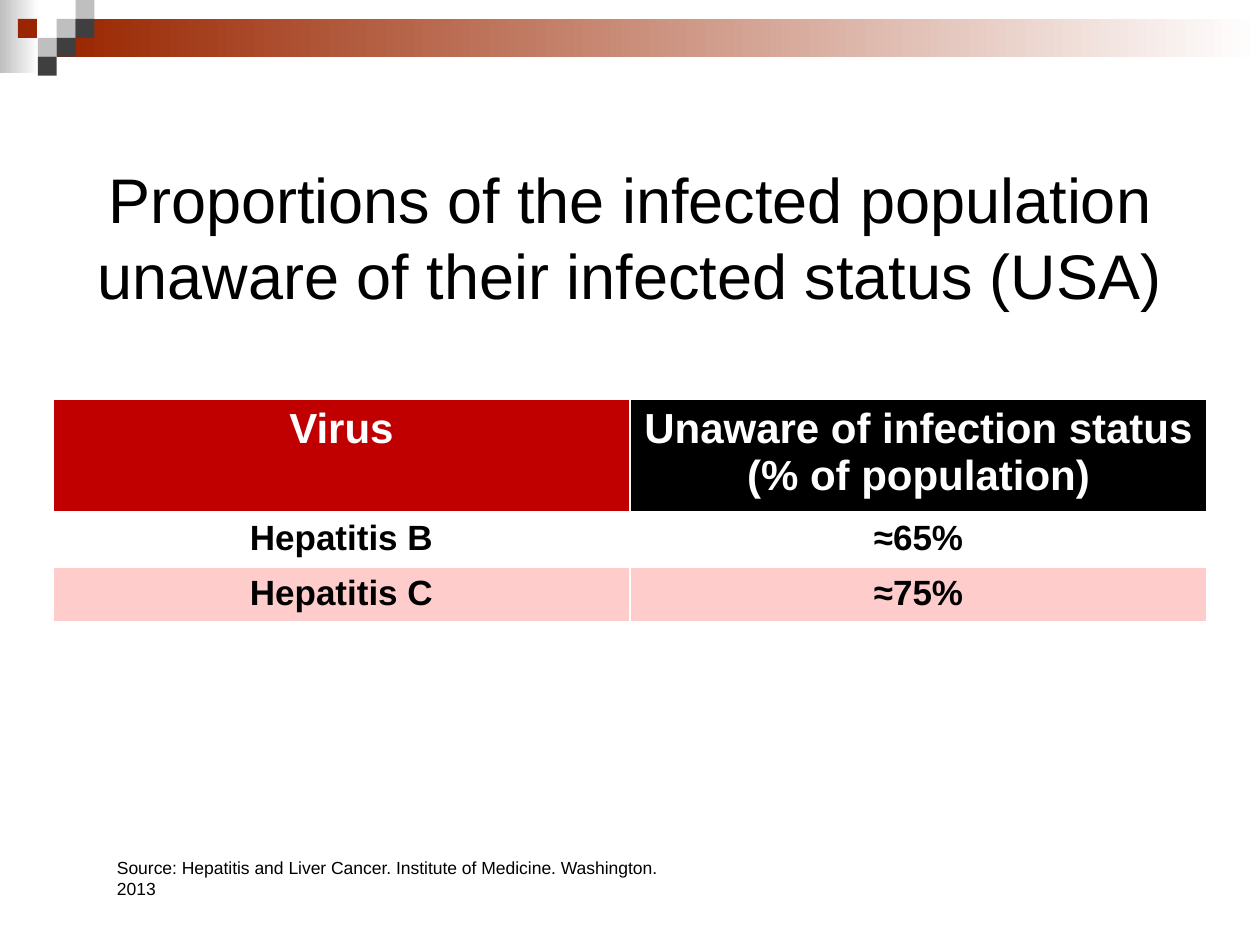
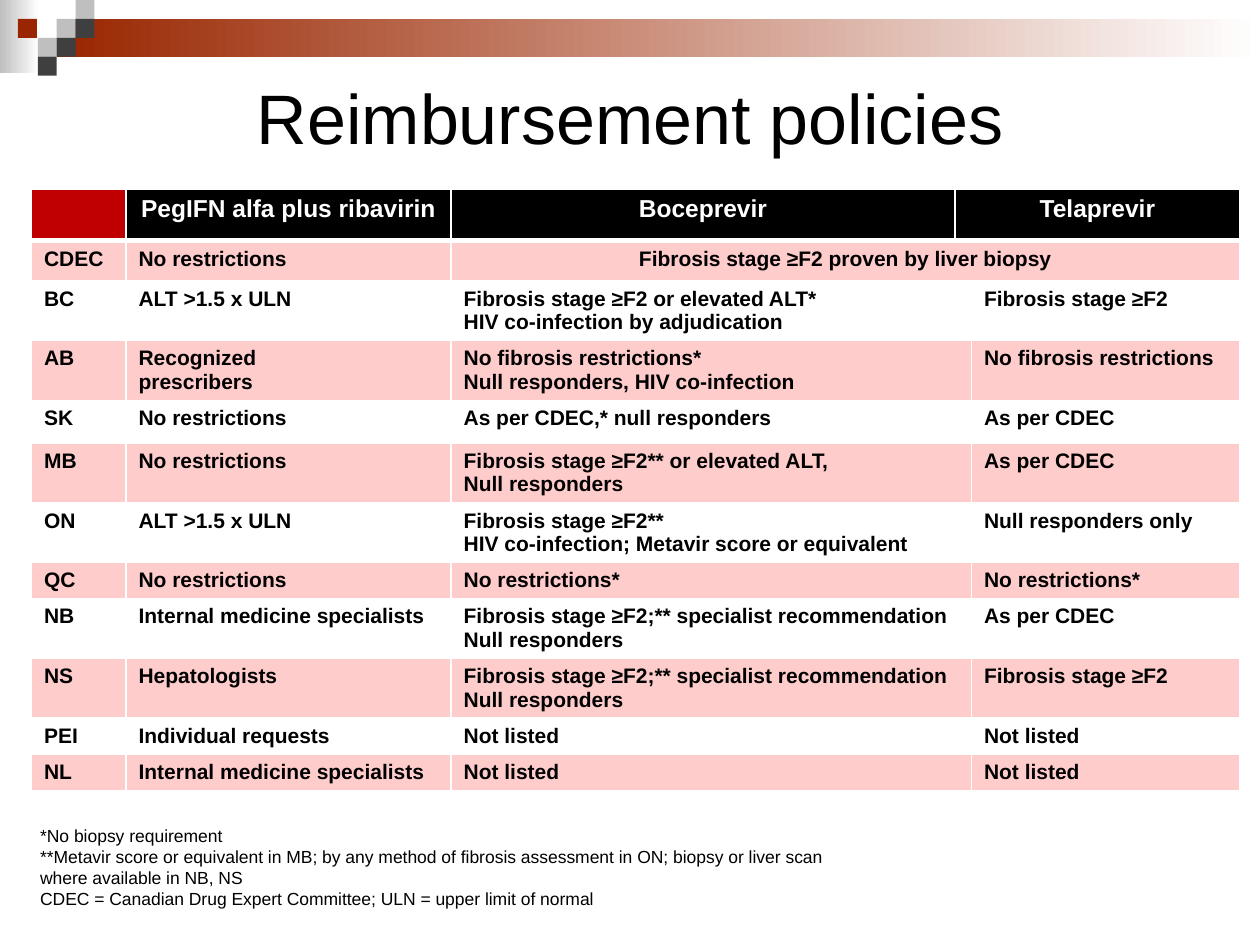
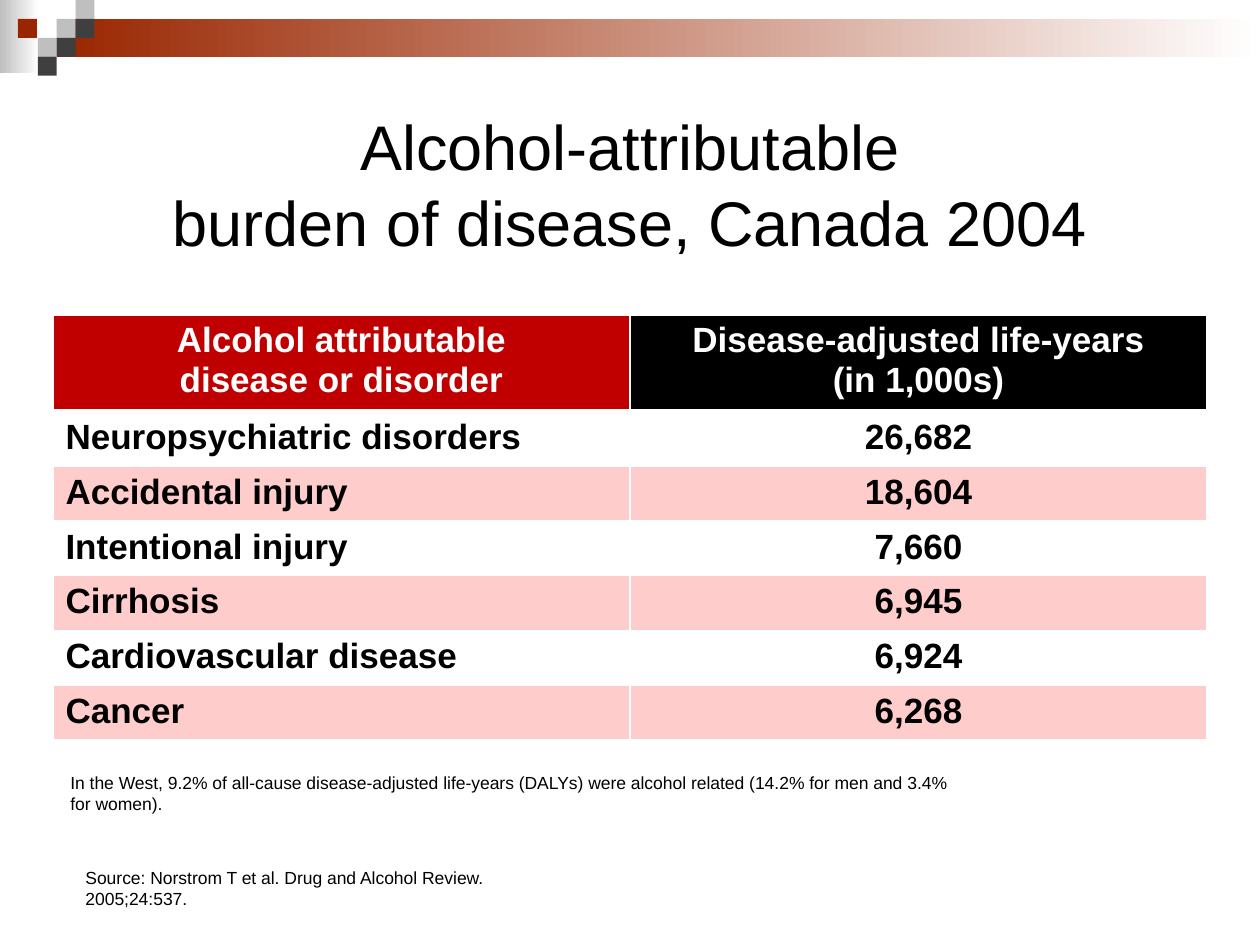
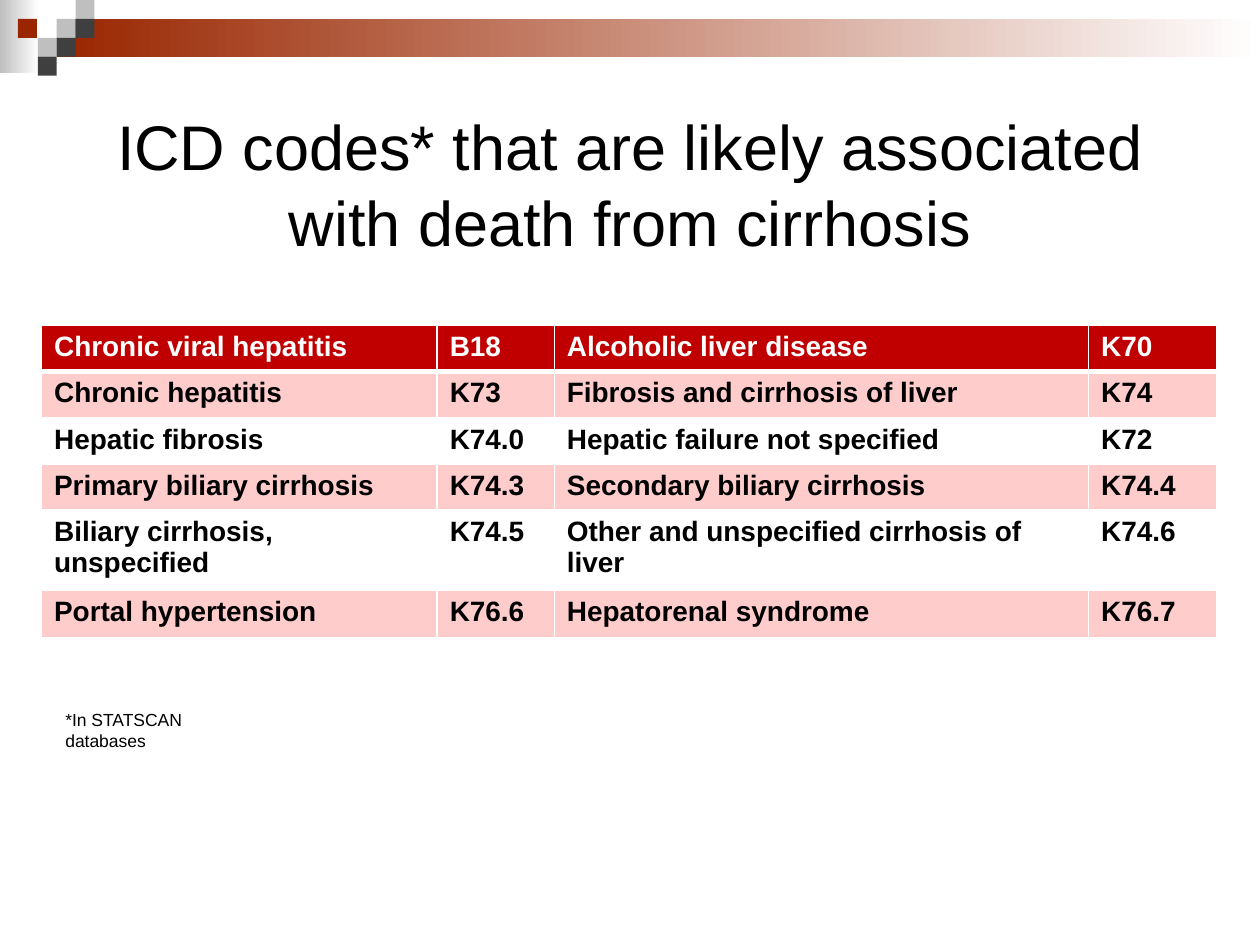
from dataclasses import dataclass
from lxml.etree import SubElement
from pptx import Presentation
from pptx.dml.color import RGBColor
from pptx.enum.shapes import MSO_SHAPE
from pptx.enum.text import MSO_ANCHOR, MSO_AUTO_SIZE, PP_ALIGN
from pptx.oxml.ns import qn
from pptx.util import Inches, Pt


@dataclass(frozen=True)
class Theme:
    font: str = "Arial"
    black: str = "000000"
    white: str = "FFFFFF"
    red: str = "C00000"
    pink: str = "FFCCCC"
    rust: str = "992600"
    silver: str = "BFBFBF"
    charcoal: str = "3F3F3F"
    title_size: int = 36
    large_title_size: int = 40
    note_size: int = 10
    thin_border: int = 1
    header_border: int = 3


THEME = Theme()
TITLE_ONLY = 5
TILE = 0.15
TILES = [
    (3, 1, THEME.silver), (4, 0, THEME.silver), (4, 1, THEME.charcoal),
    (2, 2, THEME.silver), (0.95, 1, THEME.rust), (3, 2, THEME.charcoal),
    (2, 3, THEME.charcoal),
]


def color(value):
    return RGBColor.from_string(value)


def style_paragraph(paragraph, size, text_color=THEME.black, bold=False, centred=False):
    paragraph.alignment = PP_ALIGN.CENTER if centred else PP_ALIGN.LEFT
    font = paragraph.font
    font.name = THEME.font
    font.size = Pt(size)
    font.bold = bold
    font.color.rgb = color(text_color)


def add_rectangle(group, left, top, width, height, *colors):
    shape = group.shapes.add_shape(
        MSO_SHAPE.RECTANGLE, Inches(left), Inches(top), Inches(width), Inches(height)
    )
    shape.shadow.inherit = False
    shape.line.fill.background()
    if len(colors) == 1:
        shape.fill.solid()
        shape.fill.fore_color.rgb = color(colors[0])
    else:
        shape.fill.gradient()
        shape.fill.gradient_angle = 0
        for stop, stop_color in zip(shape.fill.gradient_stops, colors):
            stop.color.rgb = color(stop_color)


def add_header_band(layout, slide):
    for placeholder in list(layout.placeholders):
        if placeholder.placeholder_format.idx != 0:
            layout.shapes.element.remove(placeholder.element)
    band = slide.shapes.add_group_shape()
    add_rectangle(band, 0, 0, 0.31, 0.58, THEME.silver, THEME.white)
    add_rectangle(band, 0.45, 0.15, 9.55, 0.3, THEME.rust, THEME.white)
    for column, row, tile_color in TILES:
        add_rectangle(band, column * TILE, row * TILE, TILE, TILE, tile_color)
    layout.shapes.element.insert(2, band.element)


def add_title(slide, text, top, size=THEME.title_size):
    title = slide.shapes.title
    title.left, title.top = Inches(0.5), Inches(top)
    title.width, title.height = Inches(9), Inches(1.25)
    title.text_frame.text = text
    title.text_frame.vertical_anchor = MSO_ANCHOR.MIDDLE
    style_paragraph(title.text_frame.paragraphs[0], size, centred=True)


def add_note(slide, text, left, top, width, height=0.27):
    box = slide.shapes.add_textbox(
        Inches(left), Inches(top), Inches(width), Inches(height)
    )
    frame = box.text_frame
    frame.word_wrap = True
    frame.auto_size = MSO_AUTO_SIZE.SHAPE_TO_FIT_TEXT
    frame.text = text
    for paragraph in frame.paragraphs:
        style_paragraph(paragraph, THEME.note_size)


def add_borders(cell, bottom_width):
    properties = cell._tc.get_or_add_tcPr()
    for side in ("L", "R", "T", "B"):
        width = bottom_width if side == "B" else THEME.thin_border
        line = SubElement(properties, qn(f"a:ln{side}"), w=str(Pt(width)))
        fill = SubElement(line, qn("a:solidFill"))
        SubElement(fill, qn("a:srgbClr"), val=THEME.white)


def style_cell(cell, text, fill, size, text_color, centred, is_header):
    add_borders(cell, THEME.header_border if is_header else THEME.thin_border)
    cell.fill.solid()
    cell.fill.fore_color.rgb = color(fill)
    if text:
        cell.text_frame.text = text
    for paragraph in cell.text_frame.paragraphs:
        style_paragraph(paragraph, size, text_color, True, centred)


def merge_continuations(table, rows):
    for row_index, row in enumerate(rows):
        start = 0
        for column_index in range(1, len(row) + 1):
            if column_index < len(row) and row[column_index] is None:
                continue
            if column_index - start > 1:
                table.cell(row_index, start).merge(
                    table.cell(row_index, column_index - 1)
                )
            start = column_index


def add_data_table(slide, rows, position, height, widths, row_heights, header_fills,
                   body_fills, centred, body_size, header_size):
    left, top = position
    frame = slide.shapes.add_table(
        len(rows), len(widths), Inches(left), Inches(top),
        Inches(sum(widths)), Inches(height)
    )
    table = frame.table
    table.horz_banding = False
    for column, width in zip(table.columns, widths):
        column.width = Inches(width)
    for row, row_height in zip(table.rows, row_heights):
        row.height = Inches(row_height)
    frame.height = Inches(height)
    for row_index, row in enumerate(rows):
        is_header = row_index == 0
        for column_index, text in enumerate(row):
            style_cell(
                table.cell(row_index, column_index), text,
                header_fills[column_index] if is_header
                else body_fills[(row_index - 1) % 2],
                header_size if is_header else body_size,
                THEME.white if is_header else THEME.black,
                centred(row_index, column_index), is_header,
            )
    merge_continuations(table, rows)


def build_unaware_slide(slide):
    add_title(slide, "Proportions of the infected population unaware of their "
              "infected status (USA)", 1.25)
    add_note(slide, "Source: Hepatitis and Liver Cancer. Institute of Medicine. "
             "Washington. 2013", 0.83, 6.75, 4.54)
    rows = [
        ("Virus", "Unaware of infection status\n(% of population)"),
        ("Hepatitis B", "≈65%"),
        ("Hepatitis C", "≈75%"),
    ]
    add_data_table(
        slide, rows, (0.42, 3.17), 1.77, [4.58] * 2, [0.41, 0.34, 0.38],
        [THEME.red, THEME.black], [THEME.white, THEME.pink],
        lambda row, column: True, body_size=20, header_size=24,
    )


def build_reimbursement_slide(slide):
    add_title(slide, "Reimbursement policies", 0.3, THEME.large_title_size)
    rows = [
        ("", "PegIFN alfa plus ribavirin", "Boceprevir", "Telaprevir", None),
        ("CDEC", "No restrictions", "Fibrosis stage ≥F2 proven by liver biopsy",
         None, None),
        ("BC", "ALT >1.5 x ULN",
         "Fibrosis stage ≥F2 or elevated ALT*\nHIV co-infection by adjudication",
         None, "Fibrosis stage ≥F2"),
        ("AB", "Recognized\nprescribers",
         "No fibrosis restrictions*\nNull responders, HIV co-infection",
         None, "No fibrosis restrictions"),
        ("SK", "No restrictions", "As per CDEC,* null responders", None, "As per CDEC"),
        ("MB", "No restrictions",
         "Fibrosis stage ≥F2** or elevated ALT,\nNull responders", None, "As per CDEC"),
        ("ON", "ALT >1.5 x ULN",
         "Fibrosis stage ≥F2**\nHIV co-infection; Metavir score or equivalent",
         None, "Null responders only"),
        ("QC", "No restrictions", "No restrictions*", None, "No restrictions*"),
        ("NB", "Internal medicine specialists",
         "Fibrosis stage ≥F2;** specialist recommendation\nNull responders",
         None, "As per CDEC"),
        ("NS", "Hepatologists",
         "Fibrosis stage ≥F2;** specialist recommendation\nNull responders",
         None, "Fibrosis stage ≥F2"),
        ("PEI", "Individual requests", "Not listed", None, "Not listed"),
        ("NL", "Internal medicine specialists", "Not listed", None, "Not listed"),
    ]
    add_data_table(
        slide, rows, (0.25, 1.5), 4.96, [0.75, 2.58, 4, 0.13, 2.13],
        [0.41, 0.32, 0.24, 0.31, 0.34, 0.33, 0.25, 0.24, 0.19, 0.26, 0.22, 0.29],
        [THEME.red] + [THEME.black] * 4, [THEME.pink, THEME.white],
        lambda row, column: row == 0 or (row, column) == (1, 2),
        body_size=12, header_size=14,
    )
    add_note(
        slide,
        "*No biopsy requirement\n"
        "**Metavir score or equivalent in MB; by any method of fibrosis assessment "
        "in ON; biopsy or liver scan\n"
        "where available in NB, NS\n"
        "CDEC = Canadian Drug Expert Committee; ULN = upper limit of normal",
        0.22, 6.5, 6.52, 0.77,
    )


def build_alcohol_slide(slide):
    add_note(slide, "Source: Norstrom T et al. Drug and Alcohol Review. 2005;24:537.",
             0.58, 6.83, 3.86)
    add_title(slide, "Alcohol-attributable\vburden of disease, Canada 2004", 0.83)
    add_note(slide, "In the West, 9.2% of all-cause disease-adjusted life-years (DALYs) "
             "were alcohol related (14.2% for men and 3.4% for women).",
             0.46, 6.08, 7.29)
    rows = [
        ("Alcohol attributable\ndisease or disorder",
         "Disease-adjusted life-years\n(in 1,000s)"),
        ("Neuropsychiatric disorders", "26,682"),
        ("Accidental injury", "18,604"),
        ("Intentional injury", "7,660"),
        ("Cirrhosis", "6,945"),
        ("Cardiovascular disease", "6,924"),
        ("Cancer", "6,268"),
    ]
    add_data_table(
        slide, rows, (0.42, 2.5), 3.37, [4.58] * 2,
        [0.41] + [0.34] * 4 + [0.38] * 2,
        [THEME.red, THEME.black], [THEME.white, THEME.pink],
        lambda row, column: row == 0 or column == 1, body_size=20, header_size=20,
    )


def build_codes_slide(slide):
    add_title(slide, "ICD codes* that are likely associated with death from cirrhosis",
              0.83)
    add_note(slide, "*In STATSCAN databases", 0.42, 5.58, 1.61)
    rows = [
        ("Chronic viral hepatitis", "B18", "Alcoholic liver disease", "K70"),
        ("Chronic hepatitis", "K73", "Fibrosis and cirrhosis of liver", "K74"),
        ("Hepatic fibrosis", "K74.0", "Hepatic failure not specified", "K72"),
        ("Primary biliary cirrhosis", "K74.3", "Secondary biliary cirrhosis", "K74.4"),
        ("Biliary cirrhosis, unspecified", "K74.5",
         "Other and unspecified cirrhosis of liver", "K74.6"),
        ("Portal hypertension", "K76.6", "Hepatorenal syndrome", "K76.7"),
    ]
    add_data_table(
        slide, rows, (0.33, 2.58), 2.48, [3.14, 0.93, 4.24, 1.02],
        [0.34] * 4 + [0.38] * 2, [THEME.red] * 4, [THEME.pink, THEME.white],
        lambda row, column: False, body_size=16, header_size=16,
    )


def main():
    presentation = Presentation()
    presentation.slide_width, presentation.slide_height = Inches(10), Inches(7.5)
    layout = presentation.slide_layouts[TITLE_ONLY]
    builders = (build_unaware_slide, build_reimbursement_slide,
                build_alcohol_slide, build_codes_slide)
    slides = [presentation.slides.add_slide(layout) for builder in builders]
    add_header_band(layout, slides[0])
    for build, slide in zip(builders, slides):
        build(slide)
    presentation.save("out.pptx")


if __name__ == "__main__":
    main()
